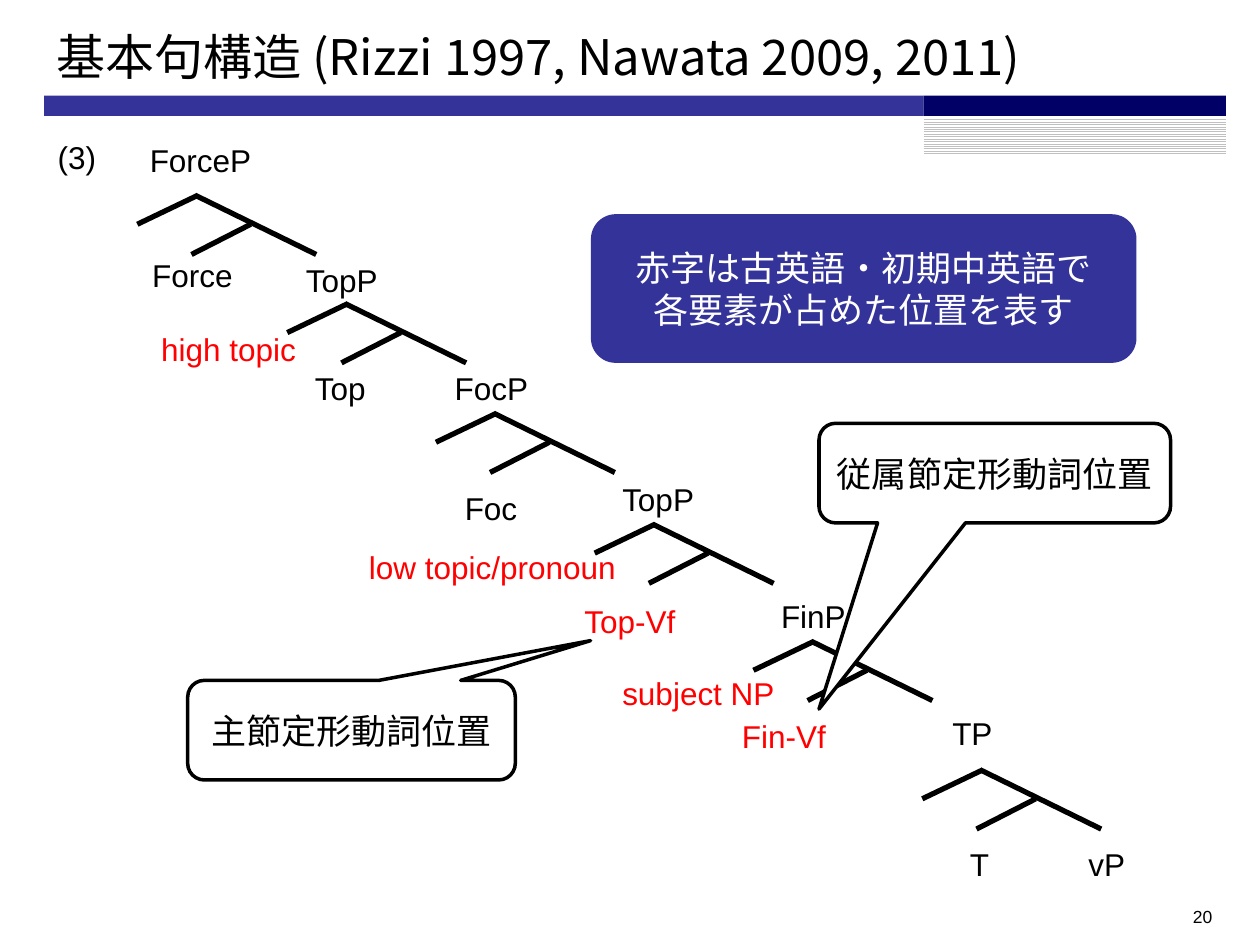
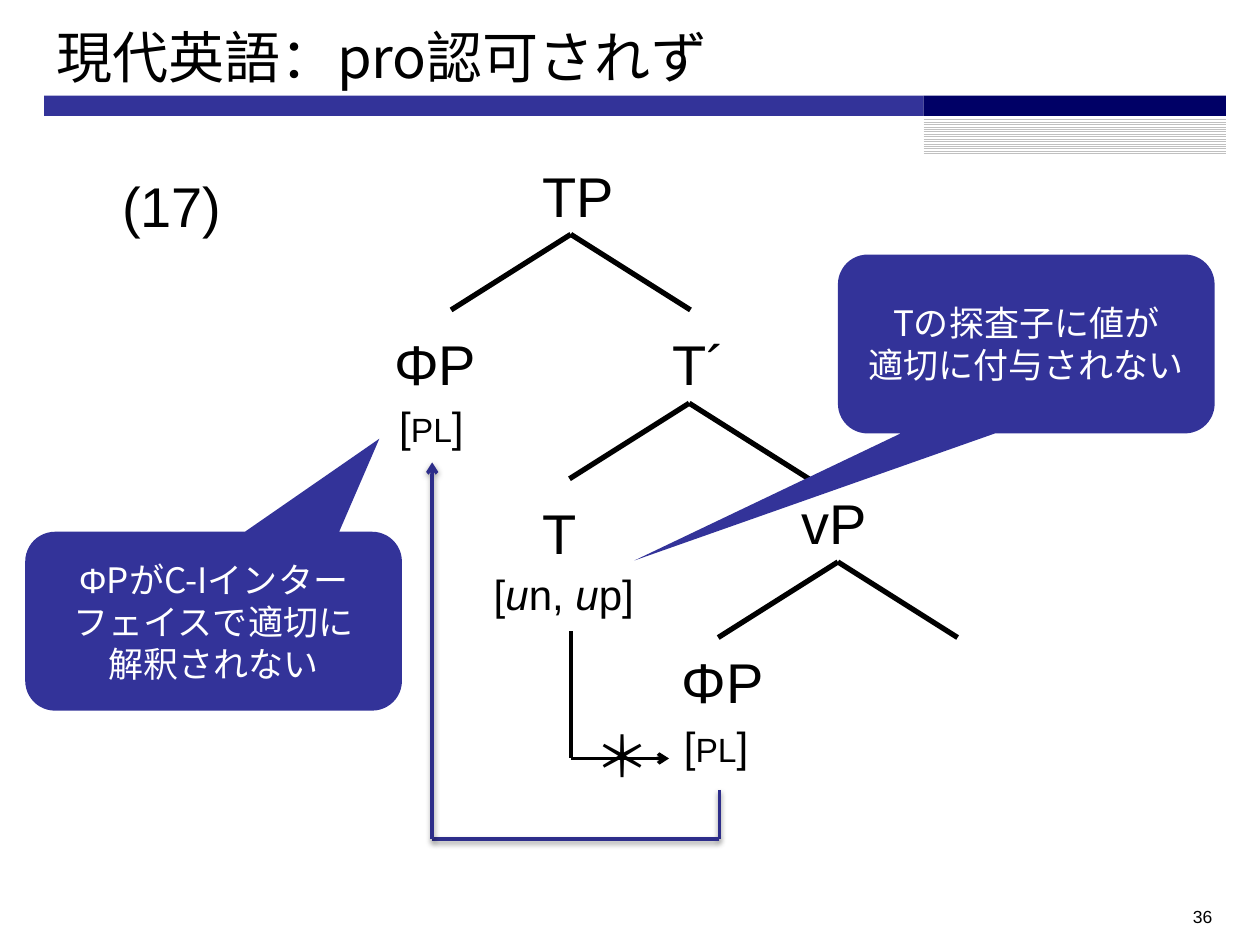
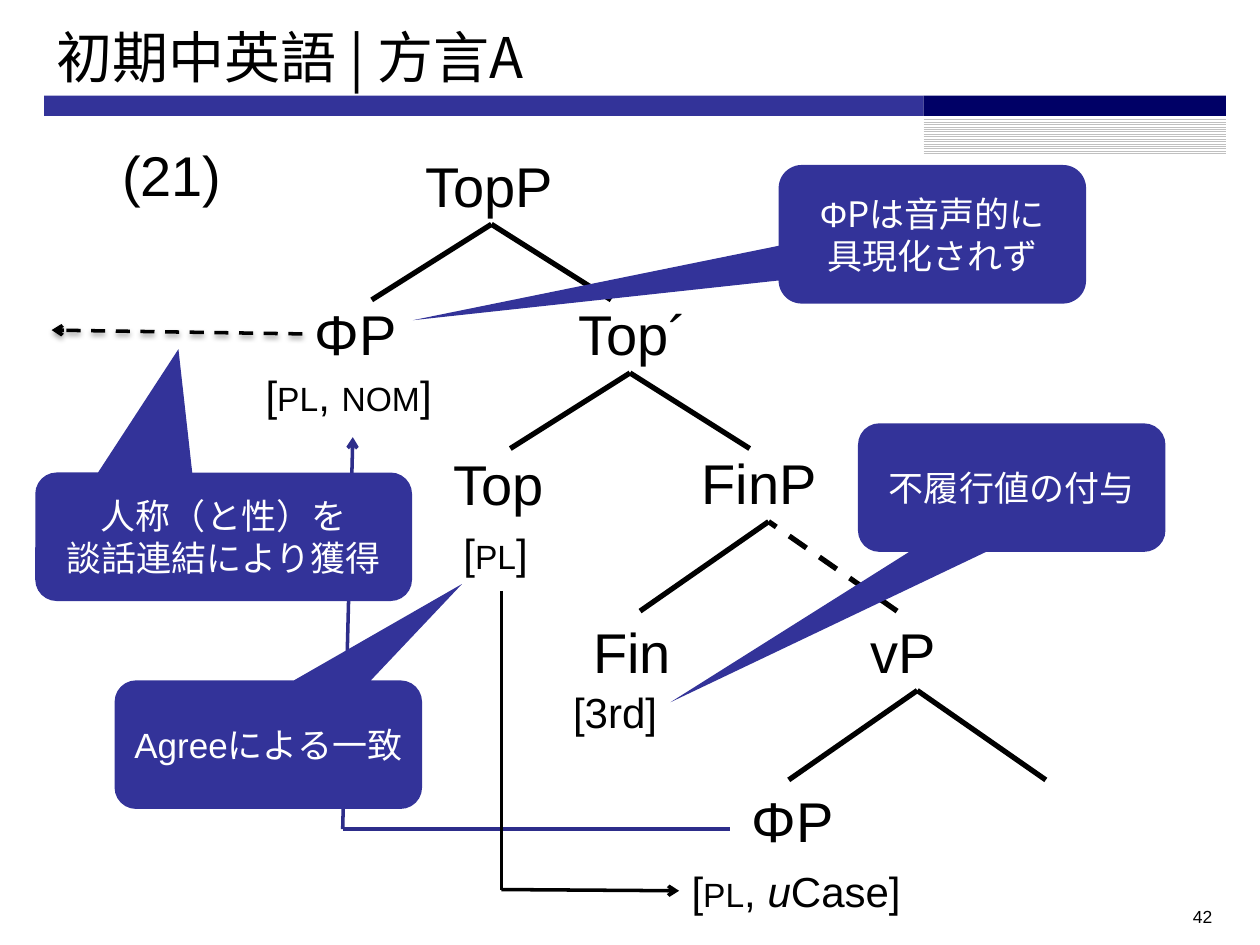
from lxml.etree import SubElement
from pptx import Presentation
from pptx.dml.color import RGBColor
from pptx.enum.dml import MSO_LINE, MSO_PATTERN
from pptx.enum.shapes import MSO_CONNECTOR, MSO_SHAPE
from pptx.enum.text import MSO_ANCHOR, MSO_AUTO_SIZE, PP_ALIGN
from pptx.oxml.ns import qn
from pptx.util import Inches, Pt

BLUE = RGBColor(0x33, 0x33, 0x99)
NAVY = RGBColor(0x00, 0x00, 0x66)
ARROW_BLUE = RGBColor(0x2D, 0x2D, 0x8A)
GREY = RGBColor(0xC0, 0xC0, 0xC0)
BLACK = RGBColor(0x00, 0x00, 0x00)
WHITE = RGBColor(0xFF, 0xFF, 0xFF)
RED = RGBColor(0xFF, 0x00, 0x00)
LATIN = "Arial"
CJK = "Noto Sans CJK JP"
LABEL_HEIGHT = {18: 0.4, 24: 0.5, 32: 0.64}
PL = ["[", ("pl", "small"), "]"]


def inches(*values):
    return [Inches(v) for v in values]


def write_runs(p, pieces, size, color, font=LATIN):
    """Write pieces: plain strings, or (text, style) with small, italic or latin."""
    for piece in [pieces] if isinstance(pieces, str) else pieces:
        text, style = (piece, "") if isinstance(piece, str) else piece
        r = p.add_run()
        r.text = text
        r.font.size = Pt(size)
        r.font.color.rgb = color
        r.font.name = LATIN if style == "latin" else font
        rPr = r._r.get_or_add_rPr()
        SubElement(rPr, qn("a:ea")).set("typeface", CJK)
        if style == "italic":
            r.font.italic = True
        elif style == "small":
            rPr.set("cap", "small")


def add_label(s, pieces, x, y, width, size=32, color=BLACK):
    box = s.shapes.add_textbox(*inches(x, y, width, LABEL_HEIGHT[size]))
    box.text_frame.word_wrap = True
    write_runs(box.text_frame.paragraphs[0], pieces, size, color)


def add_line(s, start, end, width=3, color=BLACK, dash=False, arrow=False, shadow=False):
    line = s.shapes.add_connector(MSO_CONNECTOR.STRAIGHT, *inches(*start, *end))
    line.line.width = Pt(width)
    line.line.color.rgb = color
    if dash:
        line.line.dash_style = MSO_LINE.DASH
    spPr = line._element.spPr
    if arrow:
        SubElement(spPr.find(qn("a:ln")), qn("a:tailEnd")).set("type", "arrow")
    effects = SubElement(spPr, qn("a:effectLst"))
    if shadow:
        outer = SubElement(effects, qn("a:outerShdw"), blurRad=str(Pt(3.1)),
                           dist=str(Pt(1.6)), dir="5400000", rotWithShape="0")
        clr = SubElement(outer, qn("a:srgbClr"), val="000000")
        SubElement(clr, qn("a:alpha"), val="38000")


def add_path(s, points, **style):
    """Join the points with lines, the last one ending in an arrow."""
    last = len(points) - 2
    for i, (start, end) in enumerate(zip(points, points[1:])):
        add_line(s, start, end, width=2, arrow=i == last, **style)


def add_branch(s, x, y, half=0.95, height=0.6, dash_right=False):
    add_line(s, (x - half, y + height), (x, y))
    add_line(s, (x + half, y + height), (x, y), dash=dash_right)


def add_projection(s, x, y):
    """Draw a phrase with specifier, head and complement branches."""
    for x1, y1, x2, y2 in [(0.48, 0, 0, 0.23), (0.9, 0.23, 0.43, 0.47), (0.46, 0, 1.42, 0.47)]:
        add_line(s, (x + x1, y + y1), (x + x2, y + y2))


def add_bubble(s, box, lines, tip=None, outlined=False, font=CJK):
    """Add a rounded box; tip is the pointer's offset from its centre in box sizes."""
    kind = MSO_SHAPE.ROUNDED_RECTANGULAR_CALLOUT if tip else MSO_SHAPE.ROUNDED_RECTANGLE
    sp = s.shapes.add_shape(kind, *inches(*box))
    sp.shadow.inherit = False
    if tip:
        sp.adjustments[0], sp.adjustments[1] = tip
    sp.fill.solid()
    sp.fill.fore_color.rgb = WHITE if outlined else BLUE
    if outlined:
        sp.line.color.rgb = BLACK
        sp.line.width = Pt(2)
    else:
        sp.line.fill.background()
    tf = sp.text_frame
    tf.word_wrap = True
    tf.vertical_anchor = MSO_ANCHOR.MIDDLE
    for i, pieces in enumerate(lines):
        p = tf.add_paragraph() if i else tf.paragraphs[0]
        p.alignment = PP_ALIGN.CENTER
        write_runs(p, pieces, 20, BLACK if outlined else WHITE, font)


def add_bands(s, x, y):
    """Draw the rule under the title and return its parts."""
    parts = []
    for dx, dy, w, h, color in [(0, 0, 6.98, 0.16, BLUE), (6.98, 0.17, 2.4, 0.3, None),
                                (6.98, 0, 2.4, 0.16, NAVY)]:
        sp = s.shapes.add_shape(MSO_SHAPE.RECTANGLE, *inches(x + dx, y + dy, w, h))
        sp.shadow.inherit = False
        sp.line.fill.background()
        if color is None:
            sp.fill.patterned()
            sp.fill.pattern = MSO_PATTERN.LIGHT_HORIZONTAL
            sp.fill.fore_color.rgb = GREY
            sp.fill.back_color.rgb = WHITE
        else:
            sp.fill.solid()
            sp.fill.fore_color.rgb = color
        parts.append(sp)
    return parts


def prepare_layout(prs, layout):
    """Give the title-only layout its bands, and clear its footer placeholders."""
    for ph in list(layout.placeholders):
        if ph.placeholder_format.idx:
            ph._element.getparent().remove(ph._element)
    s = prs.slides[0]
    for sp in add_bands(s, 0.35, 0.76):
        layout.shapes._spTree.append(sp._element)


def add_slide(prs, layout, title, number, size=32):
    s = prs.slides.add_slide(layout)
    if len(prs.slides) == 1:
        prepare_layout(prs, layout)
    sp = s.shapes.title
    sp.left, sp.top, sp.width, sp.height = inches(0.35, 0.13, 9.38, 0.63)
    tf = sp.text_frame
    tf.auto_size = MSO_AUTO_SIZE.NONE
    tf.vertical_anchor = MSO_ANCHOR.MIDDLE
    tf.paragraphs[0].alignment = PP_ALIGN.LEFT
    write_runs(tf.paragraphs[0], title, size, BLACK, CJK)
    box = s.shapes.add_textbox(*inches(7.39, 7.14, 2.33, 0.29))
    p = box.text_frame.paragraphs[0]
    p.alignment = PP_ALIGN.RIGHT
    write_runs(p, number, 10, BLACK)
    return s


def clause_structure(prs, layout):
    s = add_slide(prs, layout, "基本句構造 (Rizzi 1997, Nawata 2009, 2011)", "20", size=28)
    for x, y in [(1.09, 1.55), (2.28, 2.41), (3.46, 3.28), (4.72, 4.16), (5.98, 5.09), (7.32, 6.11)]:
        add_projection(s, x, y)
    for text, x, y, w in [
        ("(3)", 0.36, 1.05, 0.63), ("ForceP", 1.09, 1.07, 1.02), ("Force", 1.11, 1.98, 0.87),
        ("TopP", 2.33, 2.02, 0.85), ("Top", 2.4, 2.88, 0.85), ("FocP", 3.51, 2.88, 0.85),
        ("Foc", 3.59, 3.83, 0.85), ("TopP", 4.84, 3.76, 0.85), ("FinP", 6.1, 4.69, 0.85),
        ("TP", 7.46, 5.62, 0.6), ("T", 7.6, 6.66, 0.6), ("vP", 8.54, 6.66, 0.6),
    ]:
        add_label(s, text, x, y, w, 18)
    for text, x, y, w in [
        ("high topic", 1.18, 2.57, 1.35), ("low topic/pronoun", 2.83, 4.3, 2.44),
        ("Top-Vf", 4.54, 4.73, 1.13), ("subject NP", 4.84, 5.3, 1.42), ("Fin-Vf", 5.79, 5.64, 0.9),
    ]:
        add_label(s, text, x, y, w, 18, RED)
    add_bubble(s, (1.49, 5.4, 2.6, 0.79), ["主節定形動詞位置"], (0.73, -0.9), outlined=True)
    add_bubble(s, (6.5, 3.36, 2.79, 0.79), ["従属節定形動詞位置"], (-0.5, 2.37), outlined=True)
    add_bubble(s, (4.69, 1.7, 4.33, 1.18), ["赤字は古英語・初期中英語で", "各要素が占めた位置を表す"])


def modern_english(prs, layout):
    s = add_slide(prs, layout, "現代英語：pro認可されず", "36")
    for x, y in [(4.53, 1.86), (5.47, 3.2), (6.65, 4.46)]:
        add_branch(s, x, y)
    add_path(s, [(5.71, 6.27), (5.71, 6.66), (3.43, 6.66), (3.43, 3.67)],
             color=ARROW_BLUE, shadow=True)
    add_path(s, [(4.53, 5.01), (4.53, 6.02), (5.31, 6.02)])
    for text, x, y, w in [
        ("(17)", 0.87, 1.31, 1.02), ("TP", 4.21, 1.23, 0.87), ("ΦP", 3.03, 2.57, 0.87),
        ("T´", 5.24, 2.57, 0.71), ("T", 4.21, 3.91, 0.63), ("vP", 6.26, 3.83, 0.87),
        ("ΦP", 5.31, 5.09, 0.87), ("＊", 4.62, 5.68, 0.65),
    ]:
        add_label(s, text, x, y, w)
    add_label(s, PL, 3.07, 3.13, 0.79, 24)
    add_label(s, PL, 5.33, 5.67, 0.79, 24)
    add_label(s, ["[", ("u", "italic"), "n, ", ("u", "italic"), "p]"], 3.82, 4.46, 1.42, 24)
    add_bubble(s, (6.65, 2.02, 2.99, 1.42), ["Tの探査子に値が", "適切に付与されない"], (-1.04, 1.21))
    add_bubble(s, (0.2, 4.22, 2.99, 1.42),
               [[("Φ", "latin"), "PがC-Iインター"], "フェイスで適切に", "解釈されない"], (0.44, -1.02))


def early_middle_english(prs, layout):
    s = add_slide(prs, layout, "初期中英語 | 方言A", "42")
    add_path(s, [(5.79, 6.58), (2.72, 6.58), (2.8, 3.47)], color=ARROW_BLUE)
    add_path(s, [(3.98, 4.69), (3.98, 7.06), (5.39, 7.07)])
    add_path(s, [(2.4, 2.65), (0.41, 2.62)], dash=True, shadow=True)
    add_branch(s, 3.9, 1.78)
    add_branch(s, 5, 2.96)
    add_branch(s, 6.1, 4.14, 1.02, 0.71, dash_right=True)
    add_branch(s, 7.28, 5.48, 1.02, 0.71)
    for text, x, y, w in [
        ("(21)", 0.87, 1.07, 1.02), ("TopP", 3.28, 1.15, 1.42), ("ΦP", 2.4, 2.33, 0.87),
        ("Top´", 4.49, 2.33, 1.13), ("Top", 3.5, 3.52, 0.94), ("FinP", 5.47, 3.51, 1.18),
        ("Fin", 4.61, 4.85, 0.94), ("vP", 6.81, 4.85, 0.94), ("ΦP", 5.87, 6.19, 0.87),
    ]:
        add_label(s, text, x, y, w)
    for pieces, x, y, w in [
        (["[", ("pl", "small"), ", ", ("nom", "small"), "]"], 2.01, 2.88, 1.57),
        (PL, 3.58, 4.14, 0.79), ("[3rd]", 4.45, 5.4, 1.02),
        (["[", ("pl", "small"), ", ", ("u", "italic"), "Case]"], 5.39, 6.82, 1.97),
    ]:
        add_label(s, pieces, x, y, w, 24)
    add_bubble(s, (0.28, 3.75, 2.99, 1.02), ["人称（と性）を", "談話連結により獲得"], (-0.12, -1.46))
    add_bubble(s, (0.91, 5.4, 2.44, 1.02), ["Agreeによる一致"], (0.63, -1.25), font=LATIN)
    add_bubble(s, (6.81, 3.36, 2.44, 1.02), ["不履行値の付与"], (-1.11, 1.67))
    add_bubble(s, (6.18, 1.31, 2.44, 1.1),
               [[("Φ", "latin"), "Pは音声的に"], "具現化されず"], (-1.69, 0.62))


def main():
    prs = Presentation()
    prs.slide_width, prs.slide_height = inches(10, 7.5)
    layout = prs.slide_layouts[5]
    for build in (clause_structure, modern_english, early_middle_english):
        build(prs, layout)
    prs.save("out.pptx")


if __name__ == "__main__":
    main()
